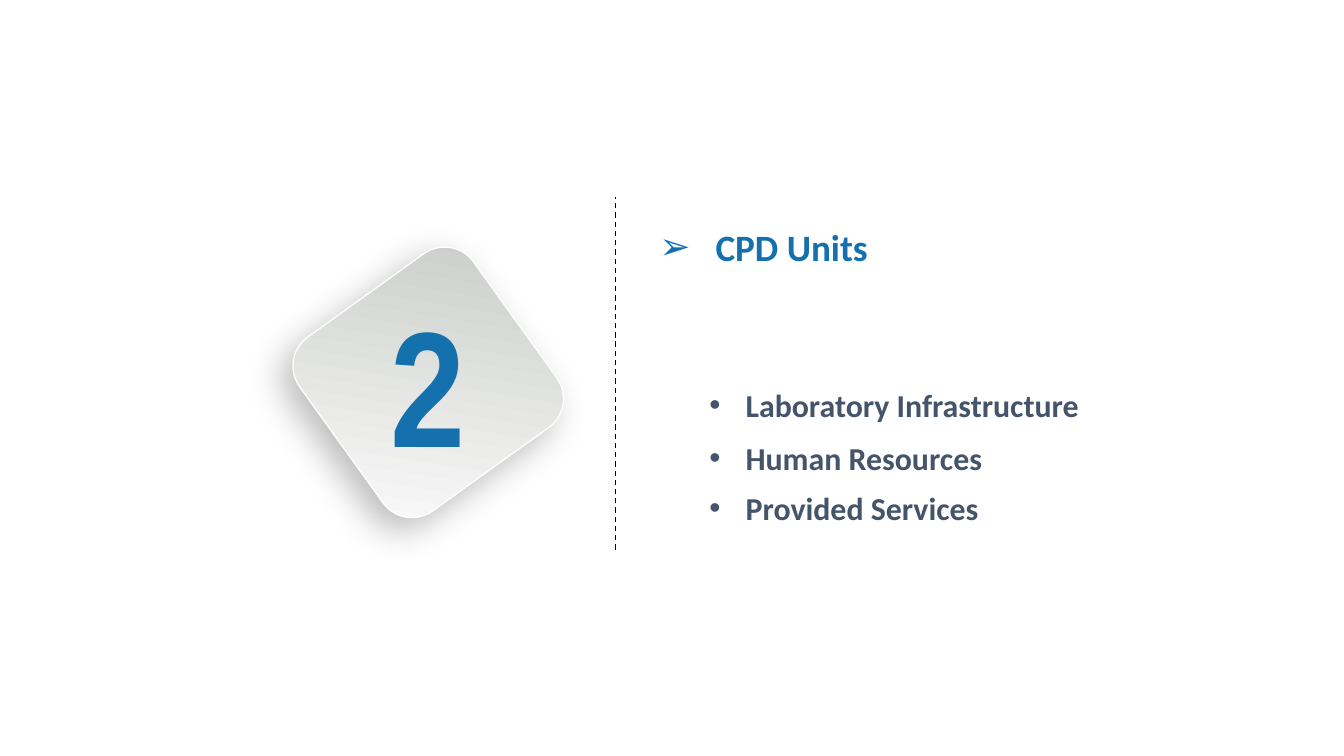
from dataclasses import dataclass

from lxml.etree import SubElement
from pptx import Presentation
from pptx.dml.color import RGBColor
from pptx.enum.dml import MSO_LINE
from pptx.enum.shapes import MSO_CONNECTOR, MSO_SHAPE
from pptx.enum.text import MSO_AUTO_SIZE, PP_ALIGN
from pptx.oxml.ns import qn
from pptx.slide import Slide
from pptx.util import Inches, Pt

BLUE = RGBColor(0x14, 0x71, 0xAE)
SLATE = RGBColor(0x44, 0x54, 0x6A)
BLACK = RGBColor(0x00, 0x00, 0x00)
WHITE = RGBColor(0xFF, 0xFF, 0xFF)
TILE_TOP = RGBColor(0xC9, 0xCB, 0xC8)
TILE_BOTTOM = RGBColor(0xFC, 0xFC, 0xFC)


@dataclass
class Label:
    text: str
    left: float
    top: float
    width: float
    height: float
    size: float
    color: RGBColor
    font: str = "Calibri"
    bullet: str = ""
    indent: float = 0
    level: int = 0
    margin_x: float = 0
    margin_y: float = 0
    align: PP_ALIGN = PP_ALIGN.LEFT


def topic(text: str, top: float, width: float) -> Label:
    return Label(text, 7.42, top, width, 0.4, 24, SLATE,
                 bullet="•", indent=0.38, level=1)


LABELS = [
    Label(" CPD Units", 6.8, 2.3, 5.73, 0.57, 28, BLUE, bullet="➢",
          indent=0.5, margin_x=0.1, margin_y=0.05),
    topic("Laboratory Infrastructure", 4.03, 4.81),
    topic("Human Resources", 4.59, 3.7),
    topic("Provided Services", 5.11, 3.55),
    Label("2", 4.03, 2.96, 0.9, 2.08, 123.8, BLUE, font="Arial Narrow",
          align=PP_ALIGN.CENTER),
]


def add_label(slide: Slide, label: Label) -> None:
    box = slide.shapes.add_textbox(Inches(label.left), Inches(label.top),
                                   Inches(label.width), Inches(label.height))
    frame = box.text_frame
    frame.word_wrap = True
    frame.auto_size = MSO_AUTO_SIZE.SHAPE_TO_FIT_TEXT
    frame.margin_left = frame.margin_right = Inches(label.margin_x)
    frame.margin_top = frame.margin_bottom = Inches(label.margin_y)
    frame.text = label.text
    paragraph = frame.paragraphs[0]
    paragraph.alignment = label.align
    paragraph.level = label.level
    if label.bullet:
        properties = paragraph._p.get_or_add_pPr()
        properties.set("marL", str(Inches(label.indent)))
        properties.set("indent", str(-Inches(label.indent)))
        SubElement(properties, qn("a:buFont"), typeface="Arial")
        SubElement(properties, qn("a:buChar"), char=label.bullet)
    font = paragraph.runs[0].font
    font.name = label.font
    font.size = Pt(label.size)
    font.bold = True
    font.color.rgb = label.color


def add_number_tile(slide: Slide) -> None:
    tile = slide.shapes.add_shape(MSO_SHAPE.ROUNDED_RECTANGLE, Inches(3.36),
                                  Inches(2.88), Inches(2.24), Inches(2.24))
    tile.rotation = 324.3
    tile.fill.gradient()
    tile.fill.gradient_angle = 225  # counter-clockwise
    for stop, color in zip(tile.fill.gradient_stops, (TILE_TOP, TILE_BOTTOM)):
        stop.color.rgb = color
    first, last = tile.fill.gradient_stops
    first.position, last.position = 0, 1
    tile.line.color.rgb = WHITE
    tile.line.width = Pt(1)
    tile.shadow.inherit = False
    effects = tile._element.spPr.find(qn("a:effectLst"))
    shadow = SubElement(effects, qn("a:outerShdw"), blurRad=str(Pt(27)),
                        dist=str(Pt(12)), dir=str(135 * 60000),
                        algn="tr", rotWithShape="0")
    color = SubElement(shadow, qn("a:srgbClr"), val=str(BLACK))
    SubElement(color, qn("a:alpha"), val="26000")


def add_divider(slide: Slide) -> None:
    divider = slide.shapes.add_connector(MSO_CONNECTOR.STRAIGHT, Inches(6.44),
                                         Inches(5.75), Inches(6.44), Inches(2.06))
    divider.line.color.rgb = BLACK
    divider.line.width = Pt(1)
    divider.line.dash_style = MSO_LINE.DASH
    SubElement(divider._element.spPr, qn("a:effectLst"))


def main() -> None:
    presentation = Presentation()
    presentation.slide_width = Inches(14.06)
    presentation.slide_height = Inches(7.91)
    slide = presentation.slides.add_slide(presentation.slide_layouts[6])
    add_number_tile(slide)
    add_divider(slide)
    for label in LABELS:
        add_label(slide, label)
    presentation.save("out.pptx")


if __name__ == "__main__":
    main()
